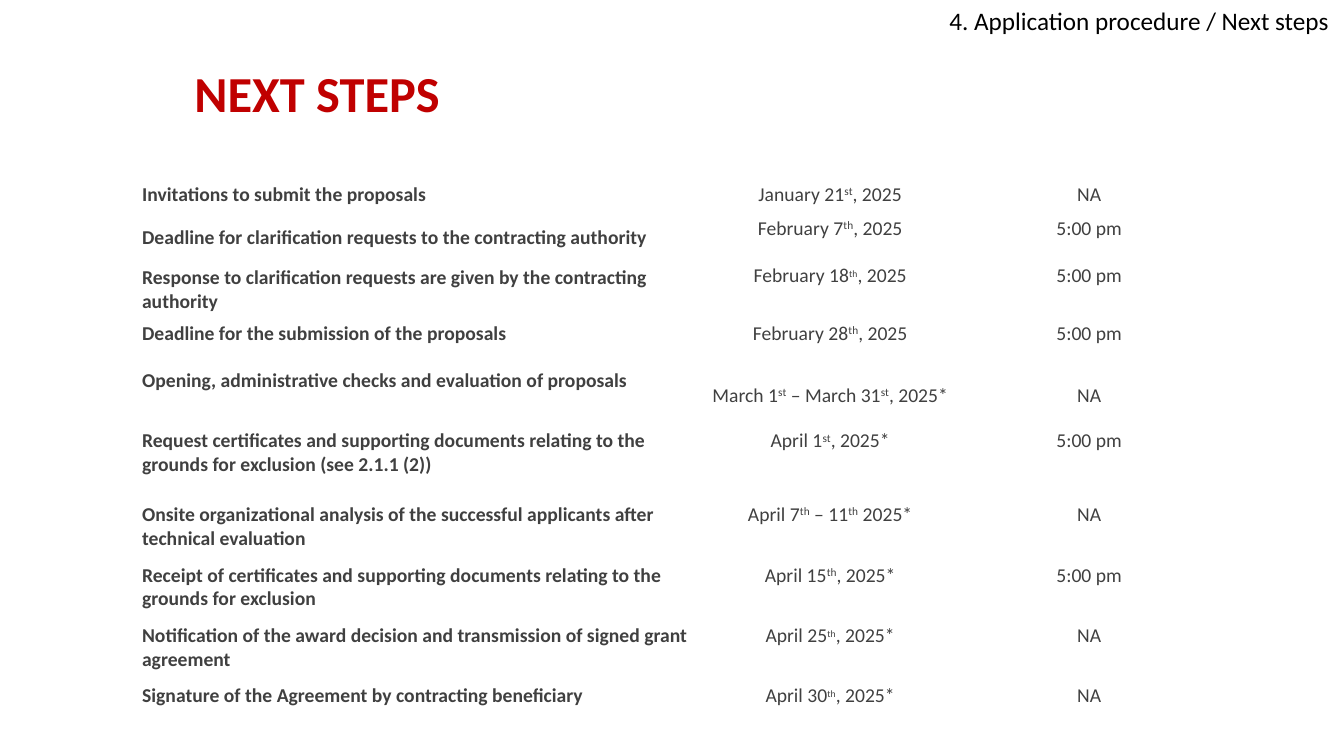
import pptx
import pptx.util
import pptx.dml.color
import pptx.enum.text
import pptx.oxml
import pptx.oxml.ns

Pt = pptx.util.Pt
ANCHOR = pptx.enum.text.MSO_ANCHOR
ALIGN = pptx.enum.text.PP_ALIGN
TOP, MIDDLE = ANCHOR.TOP, ANCHOR.MIDDLE

SECTION = "4. Application procedure / Next steps"
TITLE = "NEXT STEPS"

# Step, date (ordinals between carets), time, ordinal style, row height, step anchor, date anchor
STEPS = [
    ("Invitations to submit the proposals",
     "January 21^st^, 2025", "NA", "body", 24.5, TOP, TOP),
    ("Deadline for clarification requests to the contracting authority",
     "February 7^th^, 2025", "5:00 pm", "body", 33.8, MIDDLE, TOP),
    ("Response to clarification requests are given by the contracting authority",
     "February 18^th^, 2025", "5:00 pm", "small", 41, MIDDLE, TOP),
    ("Deadline for the submission of the proposals",
     "February 28^th^, 2025", "5:00 pm", "body", 33.8, TOP, TOP),
    ("Opening, administrative checks and evaluation of proposals",
     "March 1^st^ – March 31^st^, 2025*", "NA", "body", 43.2, TOP, MIDDLE),
    ("Request certificates and supporting documents relating to the grounds for "
     "exclusion (see 2.1.1 (2))",
     "April 1^st^, 2025*", "5:00 pm", "body", 52.6, TOP, TOP),
    ("Onsite organizational analysis of the successful applicants after technical evaluation",
     "April 7^th^ – 11^th^ 2025*", "NA", "body", 43.2, TOP, TOP),
    ("Receipt of certificates and supporting documents relating to the grounds for exclusion",
     "April 15^th^, 2025*", "5:00 pm", "body", 43.2, TOP, TOP),
    ("Notification of the award decision and transmission of signed grant agreement",
     "April 25^th^, 2025*", "NA", "small", 43.2, TOP, TOP),
    ("Signature of the Agreement by contracting beneficiary",
     "April 30^th^, 2025*", "NA", "small", 33.8, TOP, TOP),
]
COLUMNS = (404, 188, 182)

THEME = {
    "font": "Calibri",
    "color": {"title": "C00000", "section": "000000", "body": "404040", "paper": "FFFFFF"},
    "size": {"title": 36, "section": 18, "body": 14, "small": 12},
}


def rgb(name):
    return pptx.dml.color.RGBColor.from_string(THEME["color"][name])


def add_run(p, text, color, size, bold=False):
    r = p.add_run()
    r.text = text
    style = {"name": THEME["font"], "size": Pt(THEME["size"][size]), "bold": bold}
    for key, value in style.items():
        setattr(r.font, key, value)
    r.font.color.rgb = rgb(color)
    return r


def add_text(s, box, text, role, wrap, bold=False):
    tf = s.shapes.add_textbox(*map(Pt, box)).text_frame
    tf.word_wrap = wrap
    add_run(tf.paragraphs[0], text, role, role, bold)
    return tf


def add_borders(cell):
    tc_pr = cell._tc.get_or_add_tcPr()
    for i, side in enumerate(("lnL", "lnR", "lnT", "lnB")):
        tc_pr.insert(i, pptx.oxml.parse_xml(
            f'<a:{side} {pptx.oxml.ns.nsdecls("a")} w="{Pt(0.5)}"><a:solidFill>'
            f'<a:srgbClr val="{THEME["color"]["paper"]}"/></a:solidFill></a:{side}>'))


def fill_cell(cell, text, is_step, ordinal, anchor):
    layout = {"margin_left": Pt(5), "margin_right": Pt(5 if is_step else 8),
              "margin_top": Pt(2.16), "margin_bottom": Pt(2.16), "vertical_anchor": anchor}
    for key, value in layout.items():
        setattr(cell, key, value)
    if is_step:
        cell.fill.solid()
        cell.fill.fore_color.rgb = rgb("paper")
    else:
        cell.fill.background()
    add_borders(cell)
    p = cell.text_frame.paragraphs[0]
    p.alignment = ALIGN.LEFT if is_step else ALIGN.CENTER
    for i, part in enumerate(text.split("^")):
        raised = i % 2 == 1
        r = add_run(p, part, "body", ordinal if raised else "body", is_step)
        if raised:
            r.font._element.set("baseline", "30000")


def add_schedule(s):
    heights = [step[4] for step in STEPS]
    table = s.shapes.add_table(len(STEPS), len(COLUMNS), Pt(96.5), Pt(128.2),
                               Pt(sum(COLUMNS)), Pt(sum(heights))).table
    table.first_row = table.horz_banding = False
    for column, width in zip(table.columns, COLUMNS):
        column.width = Pt(width)
    for row, (step, date, time, ordinal, height, step_anchor, date_anchor) in zip(table.rows, STEPS):
        row.height = Pt(height)
        for i, text in enumerate((step, date, time)):
            fill_cell(row.cells[i], text, i == 0, ordinal, date_anchor if i else step_anchor)


def main():
    prs = pptx.Presentation()
    prs.slide_width, prs.slide_height = Pt(960), Pt(540)
    s = prs.slides.add_slide(prs.slide_layouts[6])
    tf = add_text(s, (131.8, 46, 583, 90), TITLE, "title", True, True)
    tf.paragraphs[0].line_spacing = 0.9
    add_schedule(s)
    tf = add_text(s, (671, 0, 289, 29), SECTION, "section", False)
    tf.auto_size = pptx.enum.text.MSO_AUTO_SIZE.SHAPE_TO_FIT_TEXT
    prs.save("out.pptx")


if __name__ == "__main__":
    main()
